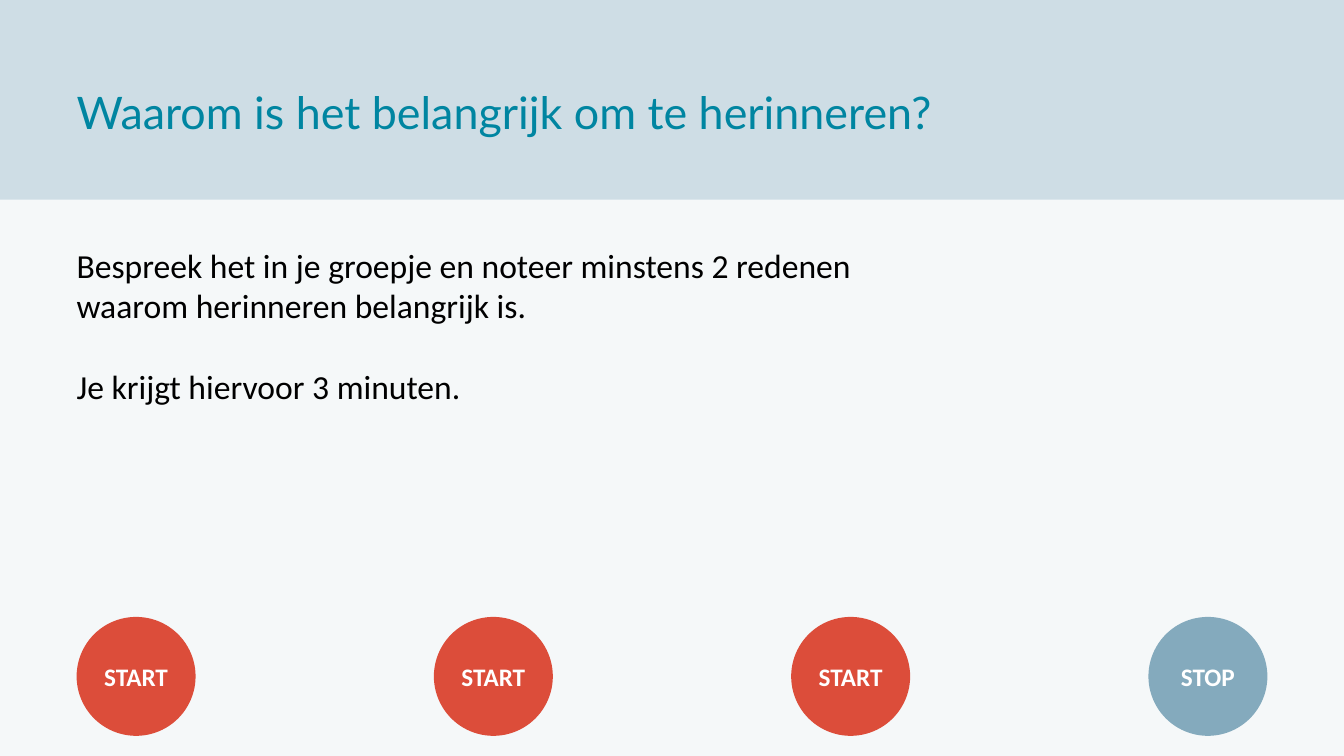
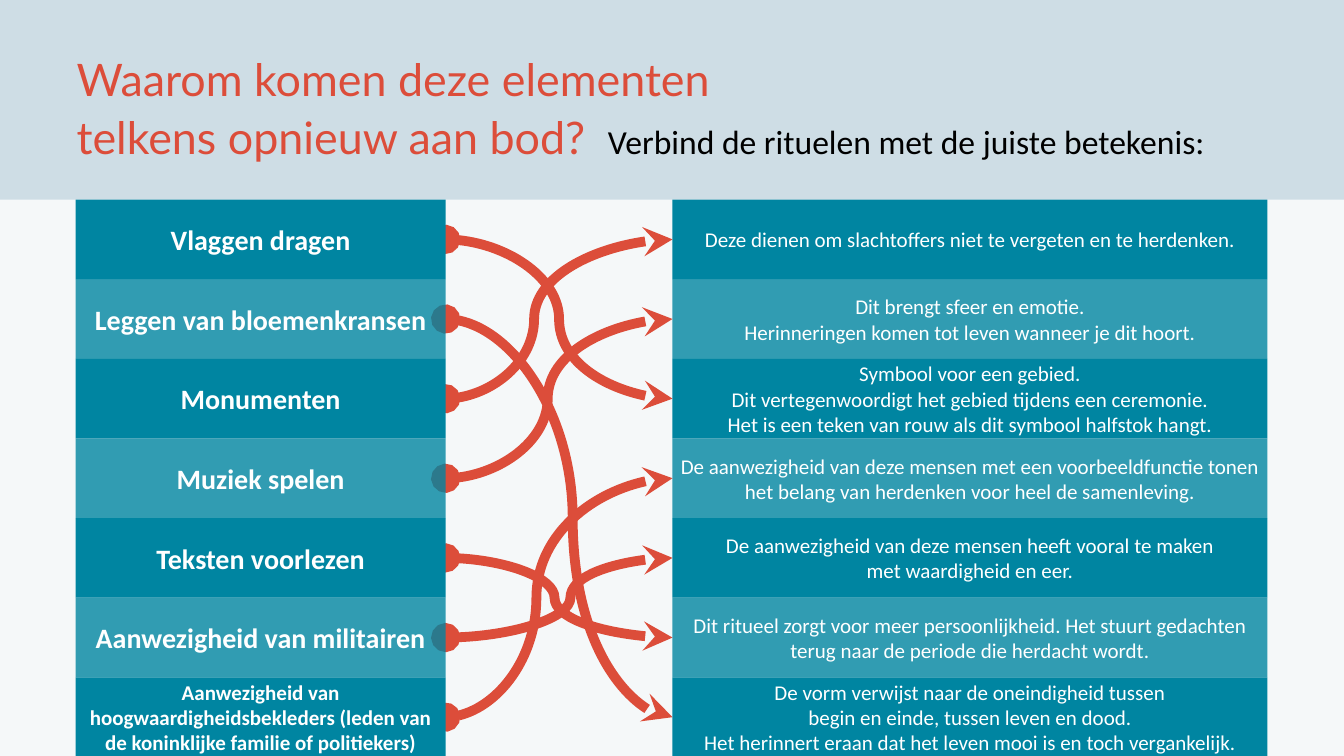
from lxml import etree
from pptx import Presentation
from pptx.dml.color import RGBColor
from pptx.enum.shapes import MSO_CONNECTOR, MSO_SHAPE
from pptx.enum.text import MSO_ANCHOR, PP_ALIGN
from pptx.oxml.ns import qn
from pptx.util import Inches, Pt

COLORS = {
    "band": "CEDDE5",
    "panel": "FFFFFF",
    "teal": "0085A1",
    "red": "DC4D3A",
    "grey": "84AABD",
    "text": "000000",
    "white": "FFFFFF",
}
TITLE_FONT, BODY_FONT = "Lato", "Calibri"
SLIDE_W, SLIDE_H = 13.33, 7.5
PANEL_TOP = 1.98
MARGIN, CONTENT_W = 0.76, 11.81
ROW_H = 0.79

RITUALS = [
    ("Vlaggen dragen", 20),
    ("Leggen van bloemenkransen", 20),
    ("Monumenten", 20),
    ("Muziek spelen", 20),
    ("Teksten voorlezen", 20),
    ("Aanwezigheid van militairen", 20),
    ("Aanwezigheid van hoogwaardigheidsbekleders (leden van "
     "de koninklijke familie of politiekers)", 15),
]
MEANINGS = [
    ("Deze dienen om slachtoffers niet te vergeten en te herdenken.", 15),
    ("Dit brengt sfeer en emotie.\n"
     "Herinneringen komen tot leven wanneer je dit hoort.", 15),
    ("Symbool voor een gebied.\n"
     "Dit vertegenwoordigt het gebied tijdens een ceremonie.\n"
     "Het is een teken van rouw als dit symbool halfstok hangt.", 15),
    ("De aanwezigheid van deze mensen met een voorbeeldfunctie tonen "
     "het belang van herdenken voor heel de samenleving.", 15),
    ("De aanwezigheid van deze mensen heeft vooral te maken\n"
     "met waardigheid en eer.", 15),
    ("Dit ritueel zorgt voor meer persoonlijkheid. Het stuurt gedachten "
     "terug naar de periode die herdacht wordt.", 15),
    ("De vorm verwijst naar de oneindigheid tussen\n"
     "begin en einde, tussen leven en dood.\n"
     "Het herinnert eraan dat het leven mooi is en toch vergankelijk.", 15),
]
MATCHES = [(0, 2, 0.5), (4, 5, 0.48), (3, 1, 0.45), (2, 0, 0.39),
           (1, 6, 0.56), (5, 4, 0.55), (6, 3, 0.4)]


def rgb(name):
    """Return the named colour."""
    return RGBColor.from_string(COLORS[name])


def add_text(paragraph, text, size, color, font=BODY_FONT, bold=False):
    """Add text to a paragraph, with a line break at each newline."""
    for index, line in enumerate(text.split("\n")):
        if index:
            paragraph.add_line_break()
        run = paragraph.add_run()
        run.text = line
        run.font.size = Pt(size)
        run.font.name = font
        run.font.bold = bold
        run.font.color.rgb = rgb(color)


def add_block(slide, kind, box, color, opacity=100):
    """Draw a filled preset shape without a line or shadow."""
    block = slide.shapes.add_shape(kind, *map(Inches, box))
    block.shadow.inherit = False
    block.line.fill.background()
    block.fill.solid()
    block.fill.fore_color.rgb = rgb(color)
    if opacity < 100:
        fill = block.fill._xPr.find(qn("a:solidFill"))
        etree.SubElement(fill[0], qn("a:alpha"), val=str(opacity * 1000))
    return block


def add_label(block, text, size, inset_x, inset_y, bold=False):
    """Centre white text inside a block."""
    frame = block.text_frame
    frame.word_wrap = True
    frame.vertical_anchor = MSO_ANCHOR.MIDDLE
    frame.margin_left = frame.margin_right = Inches(inset_x)
    frame.margin_top = frame.margin_bottom = Inches(inset_y)
    frame.paragraphs[0].alignment = PP_ALIGN.CENTER
    add_text(frame.paragraphs[0], text, size, "white", bold=bold)


def add_frame(slide, box):
    """Add a wrapping text box without insets."""
    frame = slide.shapes.add_textbox(*map(Inches, box)).text_frame
    frame.word_wrap = True
    frame.margin_left = frame.margin_right = 0
    frame.margin_top = frame.margin_bottom = 0
    return frame


def add_base(prs):
    """Add a slide with the pale band and the light panel below it."""
    slide = prs.slides.add_slide(prs.slide_layouts[6])
    slide.background.fill.solid()
    slide.background.fill.fore_color.rgb = rgb("band")
    add_block(slide, MSO_SHAPE.RECTANGLE,
              (0, PANEL_TOP, SLIDE_W, SLIDE_H - PANEL_TOP), "panel", 80)
    return slide


def add_title(slide, top, text, color):
    """Write the slide title and return its paragraph."""
    frame = add_frame(slide, (MARGIN, top, CONTENT_W, PANEL_TOP - top))
    paragraph = frame.paragraphs[0]
    paragraph.line_spacing = 1.07
    add_text(paragraph, text, 32, color, TITLE_FONT)
    return paragraph


def add_buttons(slide, left, top, width, size=1.18):
    """Spread the round timer buttons evenly over the width."""
    buttons = [("START", "red")] * 3 + [("STOP", "grey")]
    step = (width - size) / (len(buttons) - 1)
    for index, (word, color) in enumerate(buttons):
        box = (left + index * step, top, size, size)
        button = add_block(slide, MSO_SHAPE.OVAL, box, color)
        add_label(button, word, 18, 0.04, 0.05, bold=True)


def add_rows(slide, left, top, width, rows, bold=False):
    """Stack labelled rows in alternating strengths of teal."""
    for index, (text, size) in enumerate(rows):
        box = (left, top + index * ROW_H, width, ROW_H)
        row = add_block(slide, MSO_SHAPE.RECTANGLE, box, "teal",
                        80 if index % 2 else 100)
        add_label(row, text, size, 0.08, 0.04, bold)


def add_matches(slide, left, top, width):
    """Join each ritual to its meaning with a curved arrow."""
    for ritual, meaning, bend in MATCHES:
        start, end = (top + (row + 0.5) * ROW_H for row in (ritual, meaning))
        arrow = slide.shapes.add_connector(
            MSO_CONNECTOR.CURVE, Inches(left), Inches(start),
            Inches(left + width), Inches(end))
        arrow.line.width = Pt(7)
        arrow.line.color.rgb = rgb("red")
        line = arrow.line._get_or_add_ln()
        etree.SubElement(line, qn("a:headEnd"), type="oval")
        etree.SubElement(line, qn("a:tailEnd"), type="stealth")
        properties = arrow._element.spPr
        etree.SubElement(properties, qn("a:effectLst"))
        guides = properties.find(qn("a:prstGeom")).get_or_add_avLst()
        etree.SubElement(guides, qn("a:gd"), name="adj1",
                         fmla=f"val {round(bend * 100000)}")


def build_discussion(prs):
    """Build the group discussion slide."""
    slide = add_base(prs)
    add_title(slide, 0.8, "Waarom is het belangrijk om te herinneren?", "teal")
    frame = add_frame(slide, (MARGIN, 2.43, CONTENT_W, 1.7))
    add_text(frame.paragraphs[0],
             "Bespreek het in je groepje en noteer minstens 2 redenen\n"
             "waarom herinneren belangrijk is.", 24, "text")
    time_limit = frame.add_paragraph()
    time_limit.space_before = Pt(29)
    add_text(time_limit, "Je krijgt hiervoor 3 minuten.", 24, "text")
    add_buttons(slide, MARGIN, 6.12, CONTENT_W)


def build_matching(prs):
    """Build the slide that matches rituals with meanings."""
    slide = add_base(prs)
    rituals_right, meanings_left = 4.42, 6.67
    add_matches(slide, rituals_right, PANEL_TOP, meanings_left - rituals_right)
    title = add_title(slide, 0.48, "Waarom komen deze elementen\n"
                      "telkens opnieuw aan bod?", "red")
    tabs = etree.SubElement(title._p.get_or_add_pPr(), qn("a:tabLst"))
    etree.SubElement(tabs, qn("a:tab"), pos=str(Inches(5.27)), algn="l")
    add_text(title, "\tVerbind de rituelen met de juiste betekenis:", 24, "text")
    add_rows(slide, 0.75, PANEL_TOP, rituals_right - 0.75, RITUALS, bold=True)
    add_rows(slide, meanings_left, PANEL_TOP, 5.9, MEANINGS)


def main():
    """Build and save the presentation."""
    prs = Presentation()
    prs.slide_width, prs.slide_height = Inches(SLIDE_W), Inches(SLIDE_H)
    build_discussion(prs)
    build_matching(prs)
    prs.save("out.pptx")


if __name__ == "__main__":
    main()
